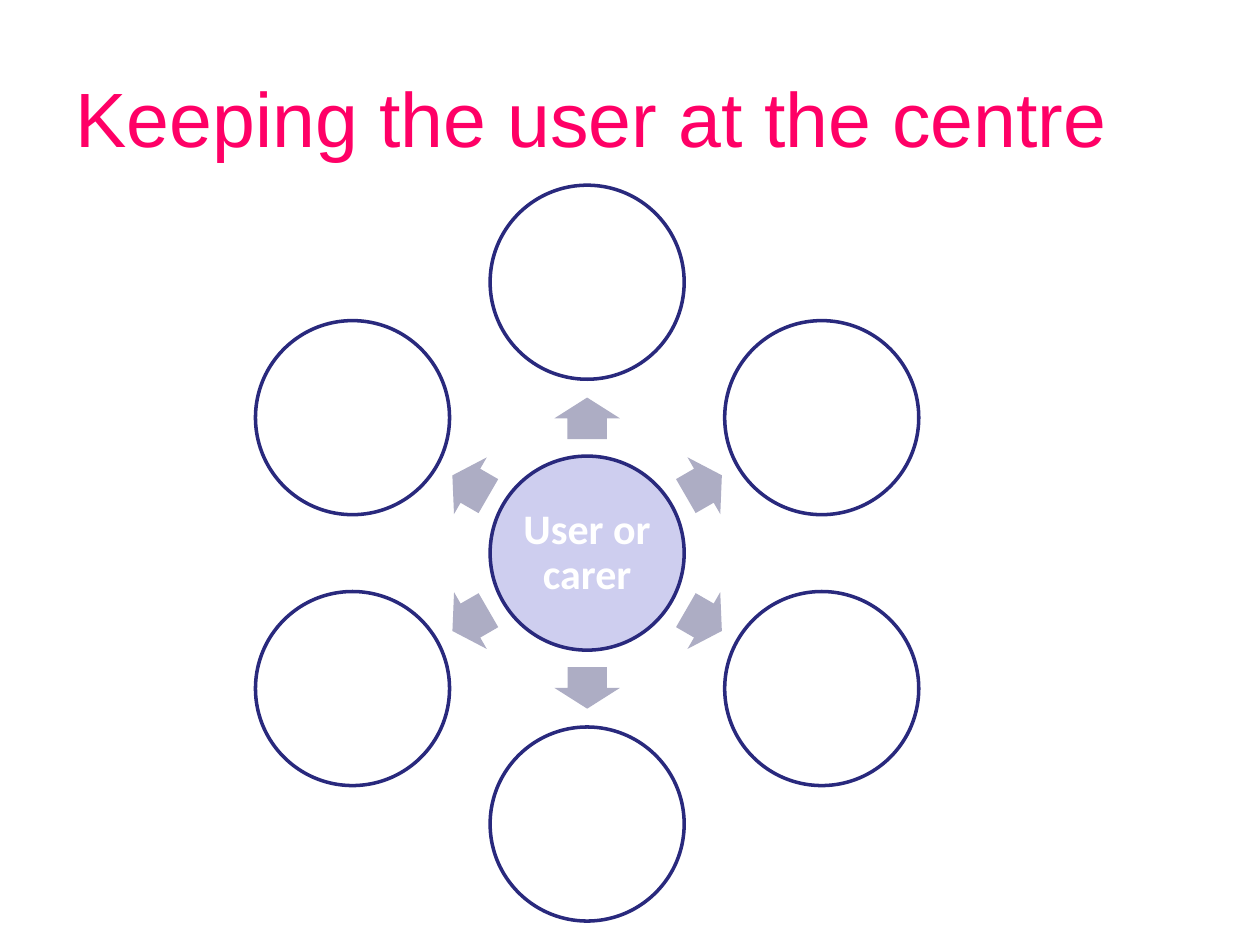
"""Build a slide with a hub circle and six satellite circles around it."""
import math
from dataclasses import dataclass

import pptx
import pptx.dml.color
import pptx.enum.shapes
import pptx.enum.text
import pptx.util

TITLE = "Keeping the user at the centre"
HUB_TEXT = "User or carer"
SATELLITES = 6

SLIDE_W, SLIDE_H = 10, 7.5
TITLE_BOX = (0.5, 0.3, 9, 1.25)
HUB = (4.66, 4.39)
DIAMETER = 1.54
RING_RADIUS = 2.15
ARROW_RADIUS = 1.07
ARROW_SIZE = (0.33, 0.52)
INSET = 0.03


@dataclass(frozen=True)
class Theme:
    title: str = "FF0066"
    hub: str = "CECEEF"
    outline: str = "29297D"
    arrow: str = "ADADC4"
    white: str = "FFFFFF"
    title_font: str = "Arial"
    hub_font: str = "Calibri"
    title_size: int = 44
    hub_size: int = 24
    line_width: int = 2


THEME = Theme()
SHAPE = pptx.enum.shapes.MSO_SHAPE
ALIGN = pptx.enum.text.PP_ALIGN
MIDDLE = pptx.enum.text.MSO_ANCHOR.MIDDLE
Inches = pptx.util.Inches


def rgb(value):
    return pptx.dml.color.RGBColor.from_string(value)


def write(tf, text, font, size, color, align, bold=False):
    tf.text = text
    tf.word_wrap = True
    tf.vertical_anchor = MIDDLE
    p = tf.paragraphs[0]
    p.alignment = align
    f = p.runs[0].font
    f.name, f.size, f.bold = font, pptx.util.Pt(size), bold
    f.color.rgb = rgb(color)
    return p


def add_centred(slide, kind, centre, size, fill):
    (x, y), (w, h) = centre, size
    sp = slide.shapes.add_shape(kind, *map(Inches, (x - w / 2, y - h / 2, w, h)))
    sp.shadow.inherit = False
    sp.fill.solid()
    sp.fill.fore_color.rgb = rgb(fill)
    return sp


def add_circle(slide, centre, fill):
    sp = add_centred(slide, SHAPE.OVAL, centre, (DIAMETER, DIAMETER), fill)
    sp.line.color.rgb = rgb(THEME.outline)
    sp.line.width = pptx.util.Pt(THEME.line_width)
    return sp


def add_arrow(slide, centre, angle):
    sp = add_centred(slide, SHAPE.RIGHT_ARROW, centre, ARROW_SIZE, THEME.arrow)
    sp.adjustments[0], sp.adjustments[1] = 0.6, 0.5
    sp.rotation = angle
    sp.line.fill.background()


def around_hub(radius, angle):
    turn = math.radians(angle)
    return HUB[0] + radius * math.cos(turn), HUB[1] + radius * math.sin(turn)


def main():
    prs = pptx.Presentation()
    prs.slide_width, prs.slide_height = Inches(SLIDE_W), Inches(SLIDE_H)
    slide = prs.slides.add_slide(prs.slide_layouts[5])

    title = slide.shapes.title
    title.left, title.top, title.width, title.height = map(Inches, TITLE_BOX)
    write(title.text_frame, TITLE, THEME.title_font, THEME.title_size,
          THEME.title, ALIGN.LEFT)

    tf = add_circle(slide, HUB, THEME.hub).text_frame
    tf.margin_left = tf.margin_right = Inches(INSET)
    tf.margin_top = tf.margin_bottom = Inches(INSET)
    p = write(tf, HUB_TEXT, THEME.hub_font, THEME.hub_size,
              THEME.white, ALIGN.CENTER, bold=True)
    p.line_spacing = 0.9

    for i in range(SATELLITES):
        angle = (270 + i * 360 / SATELLITES) % 360
        add_arrow(slide, around_hub(ARROW_RADIUS, angle), angle)
        add_circle(slide, around_hub(RING_RADIUS, angle), THEME.white)

    prs.save("out.pptx")


if __name__ == "__main__":
    main()
